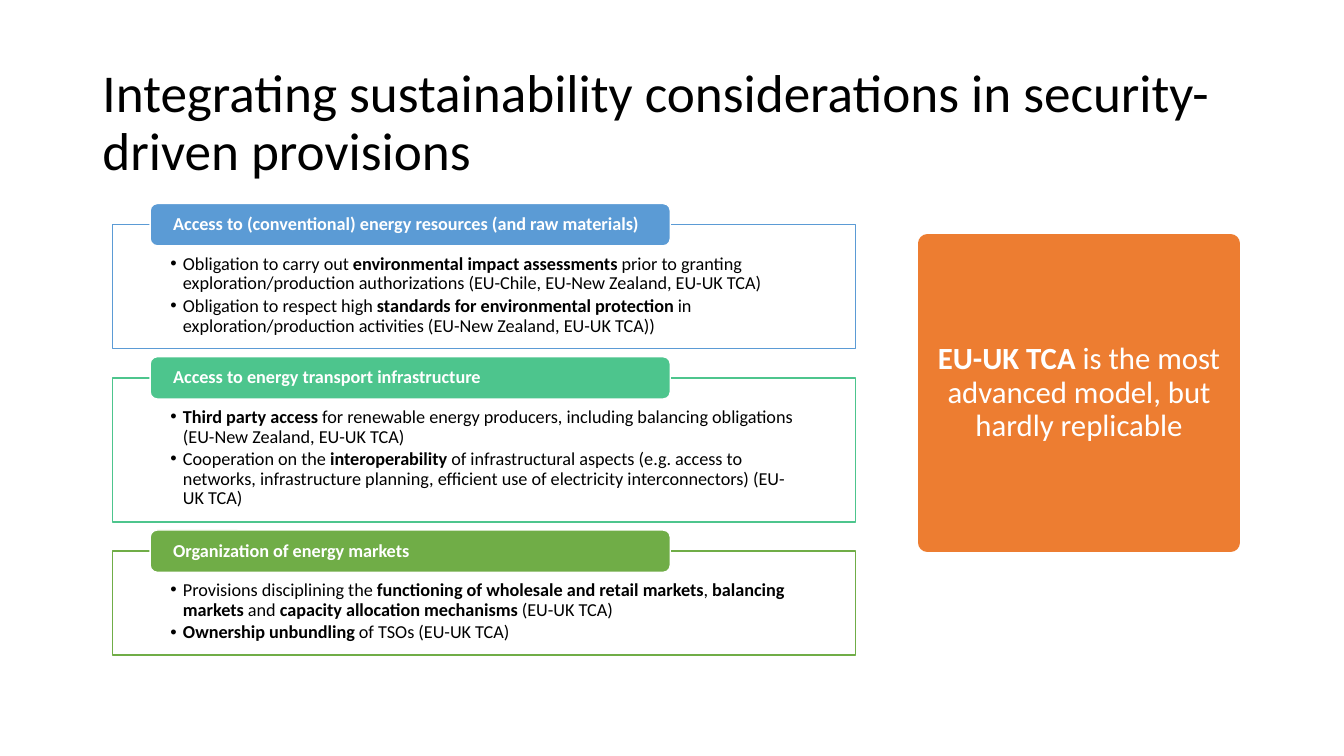
from dataclasses import dataclass

from lxml.etree import SubElement
from pptx import Presentation
from pptx.dml.color import RGBColor
from pptx.enum.shapes import MSO_SHAPE
from pptx.enum.text import MSO_ANCHOR, MSO_AUTO_SIZE, PP_ALIGN
from pptx.oxml.ns import qn
from pptx.util import Pt

FONT = "Calibri"
BLACK, WHITE, ORANGE = "000000", "FFFFFF", "ED7D31"
BOX_LEFT, BOX_WIDTH, FIRST_TOP, GAP = 80.5, 530.5, 160.5, 20.8
BAR_LEFT, BAR_WIDTH, BAR_HEIGHT = 107.3, 371.5, 30.2


@dataclass
class Section:
    heading: str
    color: str
    height: float
    bullets: list[str]


SECTIONS = [
    Section("Access to (conventional) energy resources (and raw materials)", "5B9BD5", 88.6, [
        "Obligation to carry out **environmental impact assessments **prior to granting "
        "exploration/production authorizations (EU-Chile, EU-New Zealand, EU-UK TCA)",
        "Obligation to respect high **standards for environmental protection **in "
        "exploration/production activities (EU-New Zealand, EU-UK TCA))",
    ]),
    Section("Access to energy transport infrastructure", "4DC58D", 103, [
        "**Third party access **for renewable energy producers, including balancing "
        "obligations (EU-New Zealand, EU-UK TCA)",
        "Cooperation on the **interoperability** of infrastructural aspects (e.g. access to "
        "networks, infrastructure planning, efficient use of electricity interconnectors) "
        "(EU-UK TCA)",
    ]),
    Section("Organization of energy markets", "70AD47", 74.2, [
        "Provisions disciplining the **functioning of wholesale and retail markets**, "
        "**balancing markets** and **capacity allocation mechanisms **(EU-UK TCA)",
        "**Ownership unbundling **of TSOs (EU-UK TCA)",
    ]),
]


def rgb(color: str) -> RGBColor:
    return RGBColor.from_string(color)


def place(sp, left: float, top: float, width: float, height: float) -> None:
    sp.left, sp.top, sp.width, sp.height = Pt(left), Pt(top), Pt(width), Pt(height)


def paint(sp, fill: str, line: str, weight: float) -> None:
    sp.fill.solid()
    sp.fill.fore_color.rgb = rgb(fill)
    sp.line.color.rgb = rgb(line)
    sp.line.width = Pt(weight)


def set_frame(sp, anchor: MSO_ANCHOR, left: float, top: float, right: float, bottom: float):
    tf = sp.text_frame
    tf.word_wrap, tf.auto_size, tf.vertical_anchor = True, MSO_AUTO_SIZE.NONE, anchor
    tf.margin_left, tf.margin_top = Pt(left), Pt(top)
    tf.margin_right, tf.margin_bottom = Pt(right), Pt(bottom)
    return tf


def write(p, text: str, size: float, color: str, align=PP_ALIGN.LEFT, after: float = 0) -> None:
    """Fill a paragraph; text between ** marks is bold."""
    p.alignment, p.line_spacing = align, 0.9
    p.space_before, p.space_after = Pt(0), Pt(after)
    p.font.name, p.font.size, p.font.color.rgb = FONT, Pt(size), rgb(color)
    for i, part in enumerate(text.split("**")):
        if part:
            r = p.add_run()
            r.text, r.font.bold = part, i % 2 == 1


def set_bullet(p, char: str = "", indent: float = 0) -> None:
    """Give the paragraph a hanging bullet, or none if char is empty."""
    pPr = p._p.get_or_add_pPr()
    pPr.set("marL", str(Pt(indent)))
    pPr.set("indent", str(-Pt(indent)))
    bullet = pPr.makeelement(qn("a:buChar" if char else "a:buNone"), {})
    if char:
        bullet.set("char", char)
    pPr.find(qn("a:defRPr")).addprevious(bullet)


def add_section(slide, box, section: Section, top: float) -> None:
    place(box, BOX_LEFT, top, BOX_WIDTH, section.height)
    paint(box, WHITE, section.color, 1)
    tf = set_frame(box, MSO_ANCHOR.TOP, 41.2, 21.3, 41.2, 7)
    for i, text in enumerate(section.bullets):
        p = tf.add_paragraph() if i else tf.paragraphs[0]
        write(p, text, 13, BLACK, after=2)
        set_bullet(p, "•", 9)

    bar = slide.shapes.add_shape(
        MSO_SHAPE.ROUNDED_RECTANGLE, Pt(BAR_LEFT), Pt(top - BAR_HEIGHT / 2),
        Pt(BAR_WIDTH), Pt(BAR_HEIGHT))
    bar.shadow.inherit = False
    paint(bar, section.color, WHITE, 1)
    tf = set_frame(bar, MSO_ANCHOR.MIDDLE, 15, 0, 15, 0)
    write(tf.paragraphs[0], f"**{section.heading}**", 13, WHITE)


def add_callout(sp, text: str) -> None:
    place(sp, 662.4, 174.2, 216.7, 213.1)
    paint(sp, ORANGE, ORANGE, 13.75)
    SubElement(sp.line._get_or_add_ln(), qn("a:round"))
    p = set_frame(sp, MSO_ANCHOR.MIDDLE, 5, 3.6, 5, 3.6).paragraphs[0]
    write(p, text, 22, WHITE, PP_ALIGN.CENTER)
    set_bullet(p)


def main() -> None:
    prs = Presentation()
    prs.slide_width, prs.slide_height = Pt(960), Pt(540)
    slide = prs.slides.add_slide(prs.slide_layouts.get_by_name("Comparison"))
    title, *boxes, callout = slide.placeholders

    place(title, 66, 44, 828, 89.3)
    tf = set_frame(title, MSO_ANCHOR.MIDDLE, 7.2, 3.6, 7.2, 3.6)
    write(tf.paragraphs[0],
          "Integrating sustainability considerations in security-driven provisions", 38, BLACK)

    top = FIRST_TOP
    for box, section in zip(boxes, SECTIONS):
        add_section(slide, box, section, top)
        top += section.height + GAP

    add_callout(callout, "**EU-UK TCA **is the most advanced model, but hardly replicable")
    prs.save("out.pptx")


if __name__ == "__main__":
    main()
